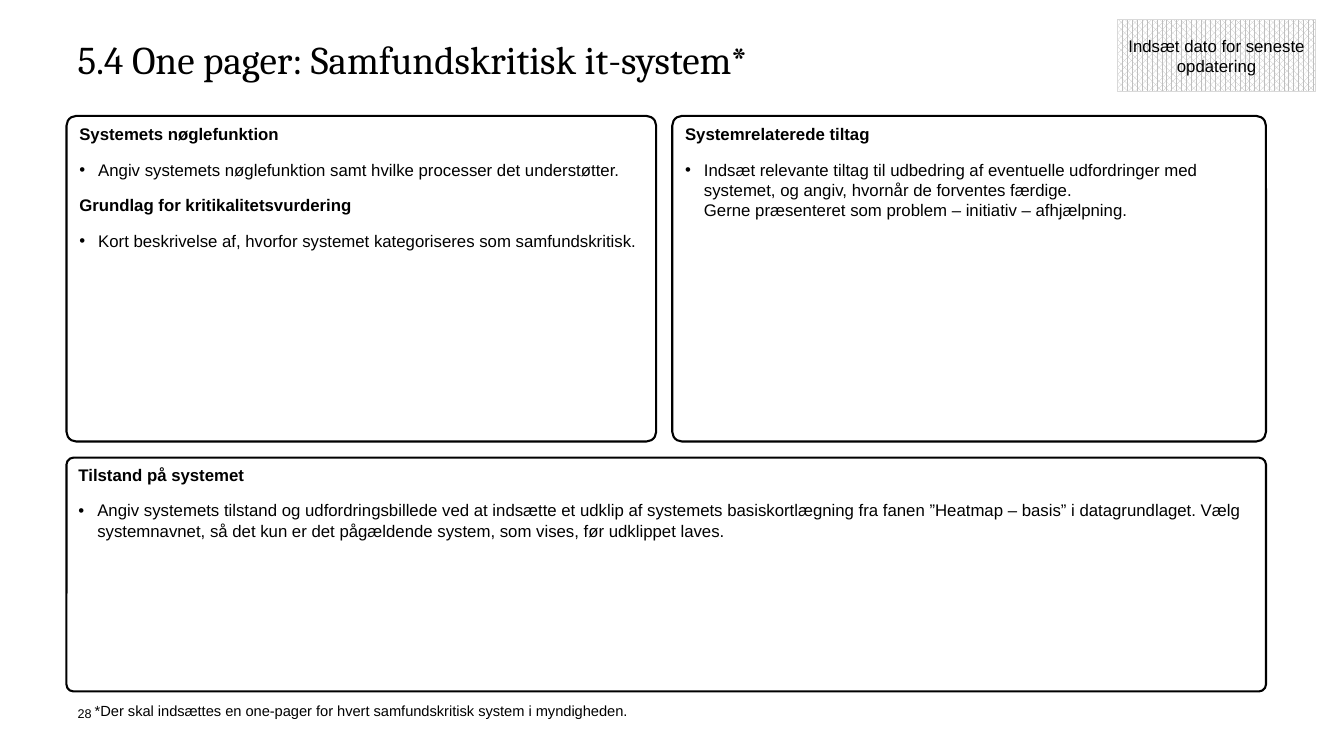
from pptx import Presentation
from pptx.dml.color import RGBColor
from pptx.enum.dml import MSO_PATTERN
from pptx.enum.shapes import MSO_SHAPE
from pptx.enum.text import MSO_ANCHOR, PP_ALIGN
from pptx.util import Pt
from lxml import etree

BLACK = RGBColor(0x00, 0x00, 0x00)
WHITE = RGBColor(0xFF, 0xFF, 0xFF)
PATTERN_GREY = RGBColor(0xBF, 0xBF, 0xBF)
BORDER_GREY = RGBColor(0xD9, 0xD9, 0xD9)
ROUND_RECT, RECT = MSO_SHAPE.ROUNDED_RECTANGLE, MSO_SHAPE.RECTANGLE
DOTTED = MSO_PATTERN.PERCENT_70
TOP, MIDDLE = MSO_ANCHOR.TOP, MSO_ANCHOR.MIDDLE
LEFT, CENTER = PP_ALIGN.LEFT, PP_ALIGN.CENTER
A = "{http://schemas.openxmlformats.org/drawingml/2006/main}"
INDENT = Pt(13.5)


def add_text(p, text, size, font="Arial", bold=False):
    """Add one run per line of text, with line breaks between them."""
    for i, line in enumerate(text.split("\n")):
        if i:
            p.add_line_break()
        r = p.add_run()
        r.text = line
        r.font.size = Pt(size)
        r.font.name = font
        r.font.bold = bold
        r.font.color.rgb = BLACK


def add_bullet(p):
    pPr = p._p.get_or_add_pPr()
    pPr.set("marL", str(INDENT))
    pPr.set("indent", str(-INDENT))
    etree.SubElement(pPr, A + "buFont", typeface="Arial")
    etree.SubElement(pPr, A + "buChar", char="•")


prs = Presentation()
prs.slide_width, prs.slide_height = Pt(960), Pt(540)
s = prs.slides.add_slide(prs.slide_layouts[6])

# Page number, title and footnote
labels = [
    (55.4, 504, 22.3, 21.6, "28", 9, "Arial", 1),
    (55.4, 28.8, 849.6, 73.4, "5.4 One pager: Samfundskritisk it-system*", 28, "Cambria", 0.9),
    (67.7, 501.1, 849.6, 13, "*Der skal indsættes en one-pager for hvert "
     "samfundskritisk system i myndigheden.", 10.5, "Arial", 1),
]
for x, y, w, h, text, size, font, spacing in labels:
    tf = s.shapes.add_textbox(Pt(x), Pt(y), Pt(w), Pt(h)).text_frame
    tf.word_wrap = True
    tf.margin_left = tf.margin_right = tf.margin_top = tf.margin_bottom = 0
    p = tf.paragraphs[0]
    p.line_spacing = spacing
    add_text(p, text, size, font)

# Panels: each holds pairs of heading and bullet
panels = [
    (47.5, 82.8, 421.2, 232.6, [
        ("Systemets nøglefunktion",
         "Angiv systemets nøglefunktion samt hvilke processer det understøtter."),
        ("Grundlag for kritikalitetsvurdering",
         "Kort beskrivelse af, hvorfor systemet kategoriseres som samfundskritisk."),
    ]),
    (480.2, 82.8, 424.1, 232.6, [
        ("Systemrelaterede tiltag",
         "Indsæt relevante tiltag til udbedring af eventuelle udfordringer med systemet, "
         "og angiv, hvornår de forventes færdige.\n"
         "Gerne præsenteret som problem – initiativ – afhjælpning."),
    ]),
    (47.5, 326.9, 856.8, 167, [
        ("Tilstand på systemet",
         "Angiv systemets tilstand og udfordringsbillede ved at indsætte et udklip af "
         "systemets basiskortlægning fra fanen ”Heatmap – basis” i datagrundlaget. Vælg "
         "systemnavnet, så det kun er det pågældende system, som vises, før udklippet laves."),
    ]),
]
for x, y, w, h, sections in panels:
    sp = s.shapes.add_shape(ROUND_RECT, Pt(x), Pt(y), Pt(w), Pt(h))
    sp.adjustments[0] = 0.03
    sp.shadow.inherit = False
    sp.fill.background()
    sp.line.color.rgb = BLACK
    sp.line.width = Pt(1.5)
    tf = sp.text_frame
    tf.word_wrap = True
    tf.vertical_anchor = TOP
    for i, (heading, bullet) in enumerate(sections):
        p = tf.add_paragraph() if i else tf.paragraphs[0]
        p.alignment = LEFT
        if i:
            p.space_before = Pt(11)
        add_text(p, heading, 12, bold=True)
        p = tf.add_paragraph()
        p.alignment = LEFT
        p.space_before = Pt(11)
        add_bullet(p)
        add_text(p, bullet, 12)

# Date of the latest update
sp = s.shapes.add_shape(RECT, Pt(798.5), Pt(13.7), Pt(141.1), Pt(51.8))
sp.shadow.inherit = False
sp.fill.patterned()
sp.fill.pattern = DOTTED
sp.fill.fore_color.rgb = PATTERN_GREY
sp.fill.back_color.rgb = WHITE
sp.line.color.rgb = BORDER_GREY
sp.line.width = Pt(0.5)
tf = sp.text_frame
tf.word_wrap = True
tf.vertical_anchor = MIDDLE
p = tf.paragraphs[0]
p.alignment = CENTER
add_text(p, "Indsæt dato for seneste opdatering", 12)

prs.save("out.pptx")
